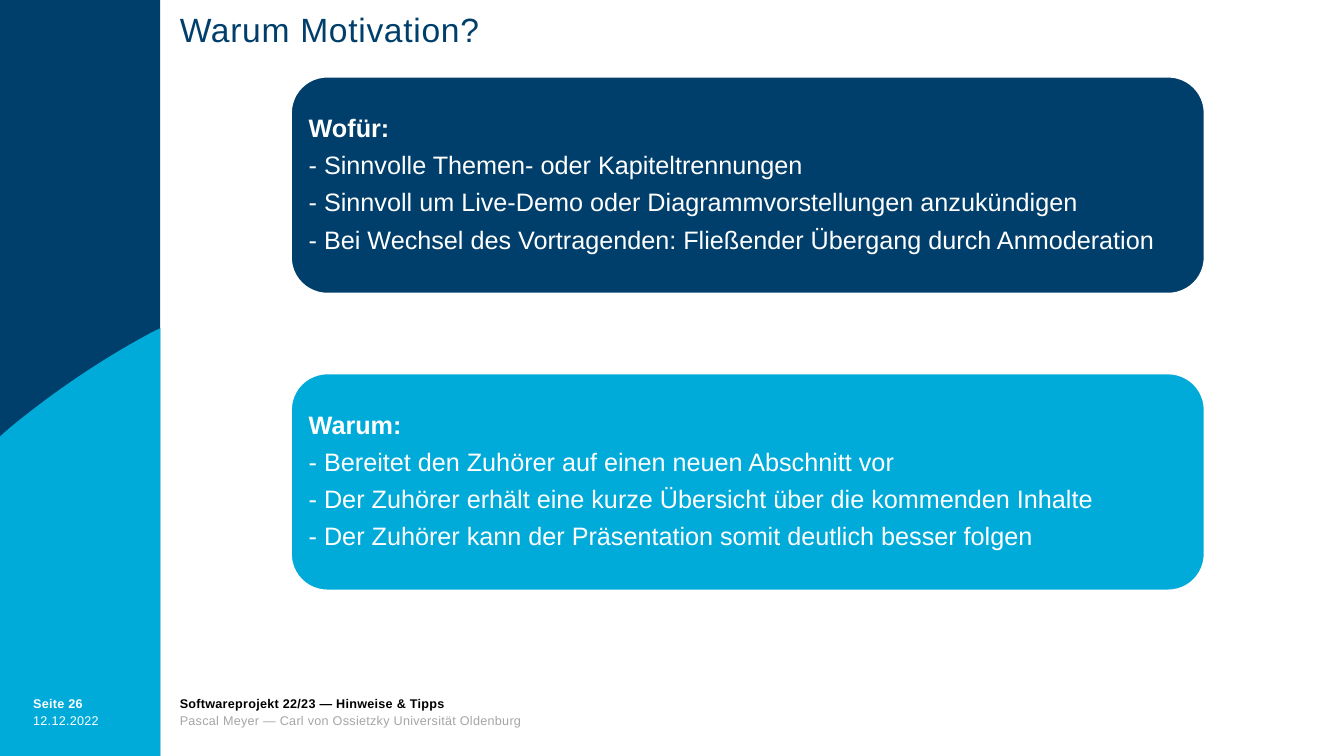
"""Build the slide "Warum Motivation?" with a sidebar, two text cards and a footer."""
import pptx
import pptx.util
import pptx.dml.color
import pptx.enum.shapes
import pptx.enum.text

Pt = pptx.util.Pt

TITLE = "Warum Motivation?"
CARDS = [
    ("navy", "Wofür:", [
        "- Sinnvolle Themen- oder Kapiteltrennungen",
        "- Sinnvoll um Live-Demo oder Diagrammvorstellungen anzukündigen",
        "- Bei Wechsel des Vortragenden: Fließender Übergang durch Anmoderation",
    ]),
    ("cyan", "Warum:", [
        "- Bereitet den Zuhörer auf einen neuen Abschnitt vor",
        "- Der Zuhörer erhält eine kurze Übersicht über die kommenden Inhalte",
        "- Der Zuhörer kann der Präsentation somit deutlich besser folgen",
    ]),
]
PAGE, DATE = "Seite 26", "12.12.2022"
FOOTER = [
    ("Softwareprojekt 22/23 — Hinweise & Tipps", True, "black"),
    ("Pascal Meyer — Carl von Ossietzky Universität Oldenburg", False, "grey"),
]

THEME = {
    "font": "Arial",
    "navy": "003F6B", "cyan": "00ABDA", "white": "FFFFFF",
    "black": "000000", "grey": "A5A5A5",
    "title": 24, "body": 18, "small": 9,
}

SLIDE_W, SLIDE_H = 960, 540
SIDEBAR_W = 114.5
CARD_X, CARD_Y, CARD_W, CARD_H, CARD_STEP = 208, 54.9, 652.3, 154.7, 212
CARD_INSET = 5
PAGE_X, TEXT_X, FOOTER_Y, FOOTER_LINE = 23.7, 128.4, 496.1, 12
CURVE = [(6.5, 306), (38, 280), (72, 257), (108, 237.6)]
CURVE_STEPS = 24


def rgb(name):
    """Return the theme colour with this name."""
    return pptx.dml.color.RGBColor.from_string(THEME[name])


def add_text(tf, text, *, size, color, bold=False, first=True, spacing=0.9, after=0, tracking=0):
    """Write one formatted paragraph into a text frame."""
    p = tf.paragraphs[0] if first else tf.add_paragraph()
    p.alignment = pptx.enum.text.PP_ALIGN.LEFT
    p.line_spacing = spacing
    p.space_after = Pt(after)
    r = p.add_run()
    r.text = text
    r.font.name = THEME["font"]
    r.font.size = Pt(THEME[size])
    r.font.bold = bold
    r.font.color.rgb = rgb(color)
    if tracking:
        r._r.get_or_add_rPr().set("spc", str(round(tracking * 100)))


def set_inset(tf, inset):
    """Give a text frame the same margin on all sides."""
    tf.margin_left = tf.margin_top = tf.margin_right = tf.margin_bottom = Pt(inset)


def add_box(slide, x, y, w, h, wrap=False):
    """Add a text box without margins and return its text frame."""
    tf = slide.shapes.add_textbox(Pt(x), Pt(y), Pt(w), Pt(h)).text_frame
    set_inset(tf, 0)
    tf.word_wrap = wrap
    return tf


def paint(sp, fill, line=None):
    """Fill a shape and set or remove its outline."""
    sp.shadow.inherit = False
    sp.fill.solid()
    sp.fill.fore_color.rgb = rgb(fill)
    if line:
        sp.line.color.rgb = rgb(line)
        sp.line.width = Pt(1)
    else:
        sp.line.fill.background()


def bezier(points, t):
    """Return the point at t on a cubic curve."""
    weights = ((1 - t) ** 3, 3 * t * (1 - t) ** 2, 3 * t ** 2 * (1 - t), t ** 3)
    return tuple(sum(w * pt[axis] for w, pt in zip(weights, points)) for axis in (0, 1))


def add_sidebar(slide):
    """Draw the navy sidebar with its curved cyan lower part."""
    shapes = slide.shapes
    sp = shapes.add_shape(pptx.enum.shapes.MSO_SHAPE.RECTANGLE, 0, 0, Pt(SIDEBAR_W), Pt(SLIDE_H))
    paint(sp, "navy")
    outline = [(0, 311.8)]
    outline += [bezier(CURVE, i / CURVE_STEPS) for i in range(CURVE_STEPS + 1)]
    outline += [(SIDEBAR_W, 234.4), (SIDEBAR_W, SLIDE_H)]
    builder = shapes.build_freeform(0, Pt(SLIDE_H))
    builder.add_line_segments([(Pt(x), Pt(y)) for x, y in outline])
    paint(builder.convert_to_shape(), "cyan")


def add_card(slide, index, color, heading, lines):
    """Draw one rounded card with a bold heading and its lines."""
    sp = slide.shapes.add_shape(
        pptx.enum.shapes.MSO_SHAPE.ROUNDED_RECTANGLE,
        Pt(CARD_X), Pt(CARD_Y + index * CARD_STEP), Pt(CARD_W), Pt(CARD_H))
    paint(sp, color, "white")
    tf = sp.text_frame
    tf.word_wrap = True
    tf.vertical_anchor = pptx.enum.text.MSO_ANCHOR.MIDDLE
    set_inset(tf, CARD_INSET)
    for i, text in enumerate([heading, *lines]):
        add_text(tf, text, size="body", color="white", bold=i == 0, first=i == 0, after=7.1)


def add_footer(slide):
    """Write page number, date and the two footer lines."""
    small = {"size": "small", "spacing": Pt(FOOTER_LINE), "tracking": 0.2}
    add_text(add_box(slide, PAGE_X, FOOTER_Y, 82, 12), PAGE, color="white", bold=True, **small)
    tf = add_box(slide, TEXT_X, FOOTER_Y, 677.5, 28.8)
    for i, (text, bold, color) in enumerate(FOOTER):
        add_text(tf, text, color=color, bold=bold, first=i == 0, **small)
    tf = add_box(slide, PAGE_X, FOOTER_Y + FOOTER_LINE, 70.6, 16.6)
    add_text(tf, DATE, color="white", **small)


def main():
    """Build and save the slide."""
    prs = pptx.Presentation()
    prs.slide_width, prs.slide_height = Pt(SLIDE_W), Pt(SLIDE_H)
    slide = prs.slides.add_slide(prs.slide_layouts[6])
    add_sidebar(slide)
    add_footer(slide)
    tf = add_box(slide, TEXT_X, 9.4, 677.5, 34.6, wrap=True)
    add_text(tf, TITLE, size="title", color="navy", tracking=0.5)
    for index, card in enumerate(CARDS):
        add_card(slide, index, *card)
    prs.save("out.pptx")


if __name__ == "__main__":
    main()
